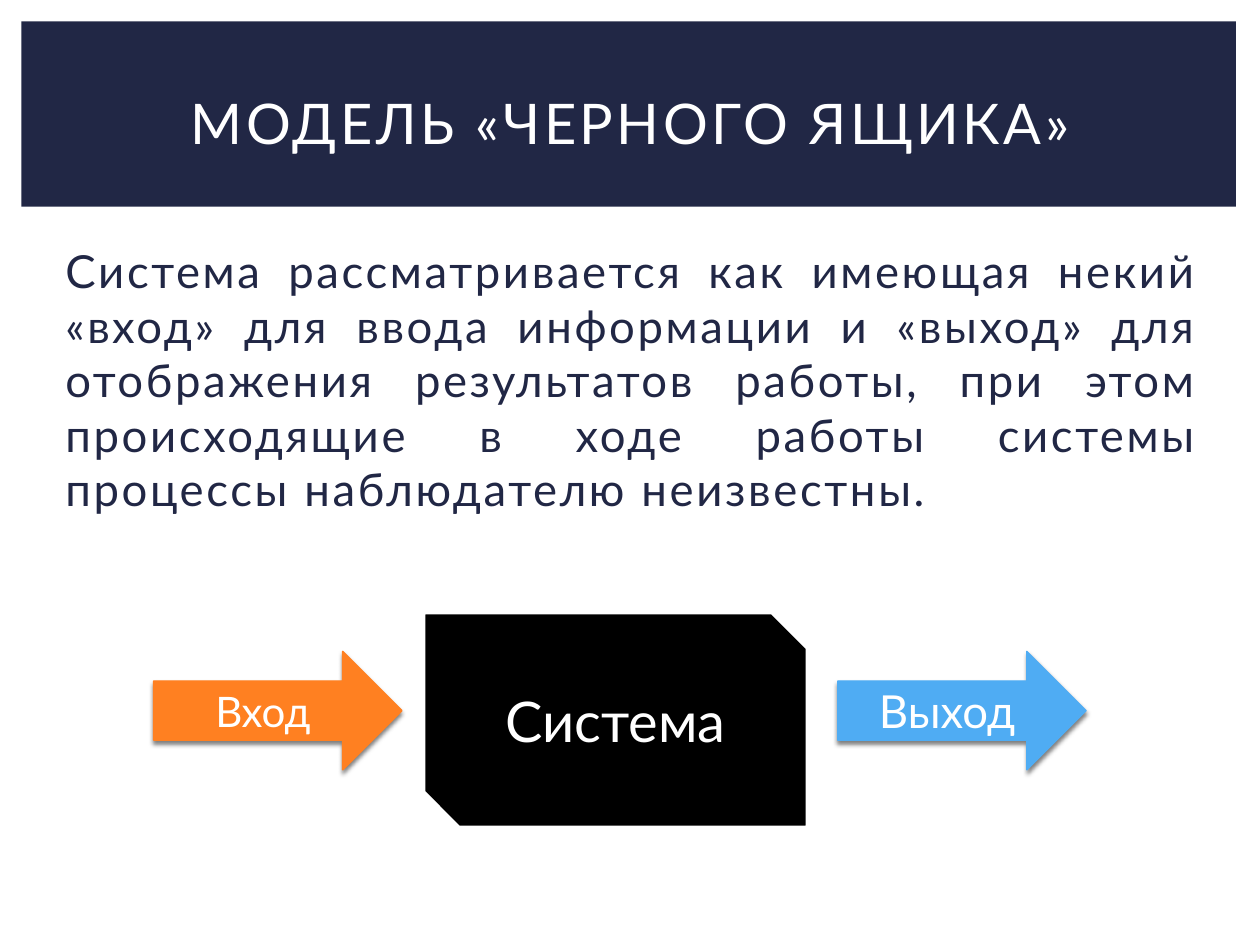
import dataclasses

import pptx
import pptx.dml.color
import pptx.enum.shapes
import pptx.enum.text
import pptx.oxml
import pptx.oxml.ns
import pptx.util

Inches = pptx.util.Inches
Pt = pptx.util.Pt
SHAPE = pptx.enum.shapes.MSO_SHAPE
ALIGN = pptx.enum.text.PP_ALIGN
ANCHOR = pptx.enum.text.MSO_ANCHOR

FONT = "Lato"
COLORS = {
    "navy": "212745",
    "white": "FFFFFF",
    "black": "000000",
    "orange": "FF8021",
    "blue": "4FACF3",
}


@dataclasses.dataclass
class Block:
    text: str
    box: tuple[float, float, float, float]
    kind: SHAPE
    fill: str
    line: str
    line_width: float
    size: int
    shadow: bool = False


def rgb(name: str) -> pptx.dml.color.RGBColor:
    return pptx.dml.color.RGBColor.from_string(COLORS[name])


def write(tf, text: str, *, size: int, color: str = "white", align=ALIGN.CENTER,
          anchor=ANCHOR.MIDDLE, spacing: float = 0, before: float = 0) -> None:
    tf.word_wrap = True
    tf.vertical_anchor = anchor
    p = tf.paragraphs[0]
    p.alignment = align
    p.space_before = Pt(before)
    r = p.add_run()
    r.text = text
    r.font.name = FONT
    r.font.size = Pt(size)
    r.font.color.rgb = rgb(color)
    if spacing:
        r.font._element.set("spc", str(int(spacing * 100)))


def add_shadow(sp) -> None:
    """Soft half-transparent shadow falling straight down."""
    effects = sp._element.spPr.find(pptx.oxml.ns.qn("a:effectLst"))
    effects.append(pptx.oxml.parse_xml(
        f'<a:outerShdw {pptx.oxml.ns.nsdecls("a")} blurRad="{Pt(2.5)}" '
        f'dist="{Pt(2)}" dir="5400000" rotWithShape="0">'
        f'<a:srgbClr val="{COLORS["black"]}"><a:alpha val="50000"/></a:srgbClr>'
        "</a:outerShdw>"))


def add_filled(s, kind: SHAPE, box: tuple[float, float, float, float], fill: str):
    sp = s.shapes.add_shape(kind, *map(Inches, box))
    sp.shadow.inherit = False
    sp.fill.solid()
    sp.fill.fore_color.rgb = rgb(fill)
    sp.line.fill.background()
    return sp


def add_block(s, block: Block) -> None:
    sp = add_filled(s, block.kind, block.box, block.fill)
    sp.line.color.rgb = rgb(block.line)
    sp.line.width = Pt(block.line_width)
    if block.shadow:
        add_shadow(sp)
    write(sp.text_frame, block.text, size=block.size)


def add_text(s, text: str, box: tuple[float, float, float, float], **style) -> None:
    write(s.shapes.add_textbox(*map(Inches, box)).text_frame, text, **style)


def arrow(text: str, left: float, color: str, size: int) -> Block:
    return Block(text, (left, 5.17, 1.97, 0.94), SHAPE.RIGHT_ARROW,
                 color, color, 0.79, size, shadow=True)


def main() -> None:
    prs = pptx.Presentation()
    prs.slide_width, prs.slide_height = Inches(10), Inches(7.5)
    s = prs.slides.add_slide(prs.slide_layouts[6])

    # Title band
    add_filled(s, SHAPE.RECTANGLE, (0.17, 0.17, 9.64, 1.47), "navy")

    # Description and title
    add_text(s, "Система рассматривается как имеющая некий «вход» для ввода "
             "информации и «выход» для отображения результатов работы, при этом "
             "происходящие в ходе работы системы процессы наблюдателю неизвестны.",
             (0.42, 1.88, 9.19, 4.82), size=26, color="navy",
             align=ALIGN.JUSTIFY, anchor=ANCHOR.TOP, spacing=1.5, before=5.2)
    add_text(s, "МОДЕЛЬ «ЧЕРНОГО ЯЩИКА»", (0.42, 0.39, 9.17, 1.15),
             size=32, spacing=2)

    # Black box with its input and output
    blocks = [
        Block("Система", (3.35, 4.85, 3.07, 1.73), SHAPE.SNIP_2_DIAG_RECTANGLE,
              "black", "white", 3.75, 32),
        arrow("Вход", 1.22, "orange", 24),
        arrow("Выход", 6.65, "blue", 26),
    ]
    for block in blocks:
        add_block(s, block)

    prs.save("out.pptx")


if __name__ == "__main__":
    main()
